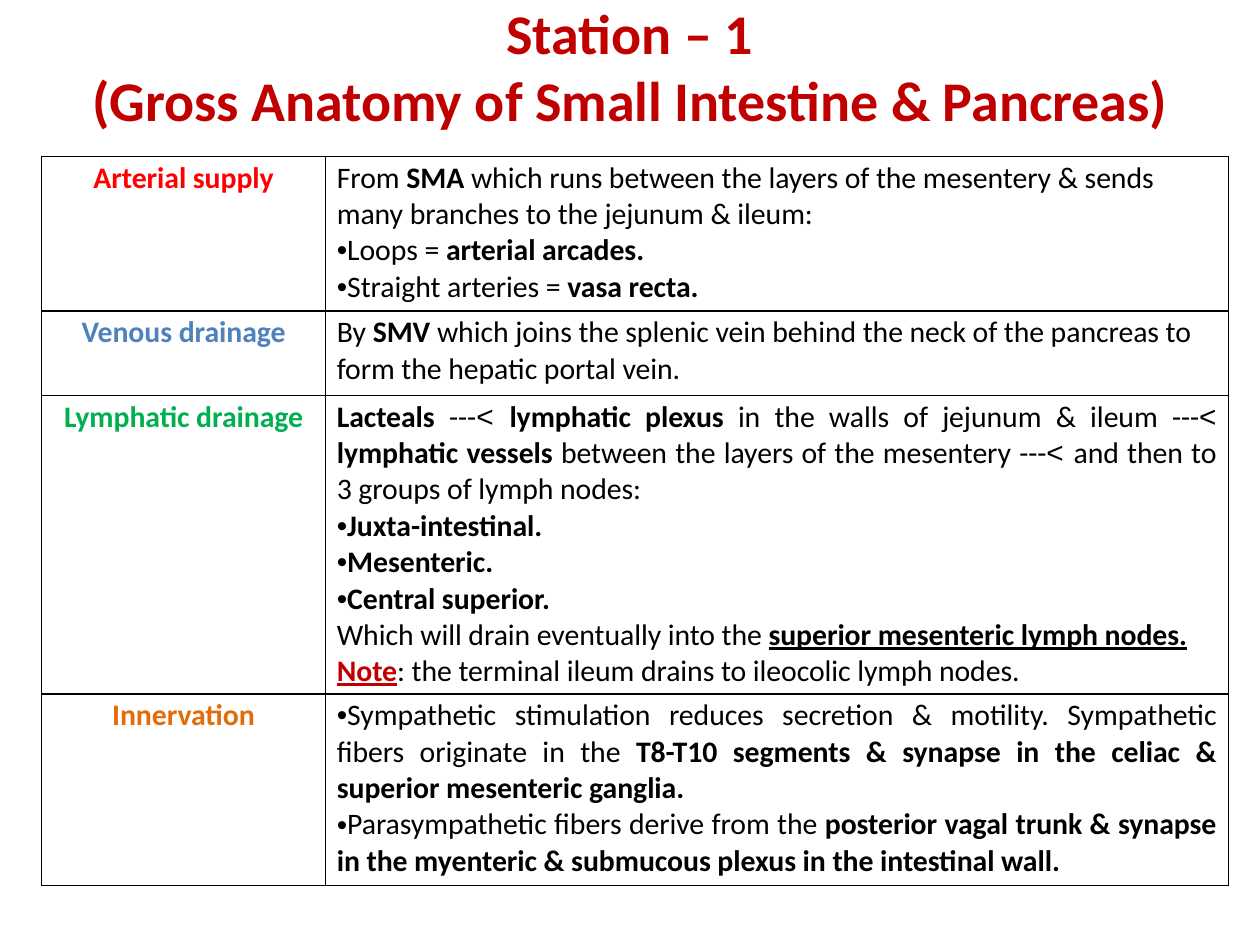
from dataclasses import dataclass

import pptx
import pptx.dml.color
import pptx.enum.text
import pptx.oxml
import pptx.oxml.ns
import pptx.util
from pptx.util import Cm, Pt

COLORS = {
    "title": "C00000",
    "text": "000000",
    "arterial": "FF0000",
    "venous": "4F81BC",
    "lymphatic": "00AF50",
    "innervation": "E36C09",
}
ALIGN = pptx.enum.text.PP_ALIGN
BODY_SIZE = 17
BODY_INDENT = Cm(0.23)


@dataclass(frozen=True)
class Span:
    text: str
    bold: bool = False
    underline: bool = False
    font: str = "Calibri"
    color: str = "text"


@dataclass(frozen=True)
class Line:
    spans: tuple[Span, ...]
    bullet: bool = False
    justified: bool = False


@dataclass(frozen=True)
class Topic:
    name: str
    color: str
    height: float
    lines: tuple[Line, ...]


def strong(text: str, **style) -> Span:
    return Span(text, bold=True, **style)


def arrow() -> Span:
    return Span("< ", font="Arial")


TOPICS = (
    Topic("Arterial supply", "arterial", 3.12, (
        Line((Span("From "), strong("SMA "),
              Span("which runs between the layers of the mesentery & sends "
                   "many branches to the jejunum & ileum:"))),
        Line((Span("Loops = "), strong("arterial arcades.")), bullet=True),
        Line((Span("Straight arteries = "), strong("vasa recta.")), bullet=True),
    )),
    Topic("Venous drainage", "venous", 1.7, (
        Line((Span("By "), strong("SMV "),
              Span("which joins the splenic vein behind the neck of the "
                   "pancreas to form the hepatic portal vein."))),
    )),
    Topic("Lymphatic drainage", "lymphatic", 6.02, (
        Line((strong("Lacteals "), Span("---"), arrow(),
              strong("lymphatic plexus "),
              Span("in the walls of jejunum & ileum ---"), arrow(),
              strong("lymphatic vessels "),
              Span("between the layers of the mesentery ---"), arrow(),
              Span("and then to 3 groups of lymph nodes:")), justified=True),
        *(Line((strong(nodes),), bullet=True, justified=True)
          for nodes in ("Juxta-intestinal.", "Mesenteric.", "Central superior.")),
        Line((Span("Which will drain eventually into the "),
              strong("superior mesenteric lymph nodes. ", underline=True),
              strong("Note", underline=True, color="title"),
              Span(": the terminal ileum drains to ileocolic lymph nodes."))),
    )),
    Topic("Innervation", "innervation", 3.86, (
        Line((Span("Sympathetic stimulation reduces secretion & motility. "
                   "Sympathetic fibers originate in the "),
              strong("T8-T10 segments & synapse in the celiac & "
                     "superior mesenteric ganglia.")),
             bullet=True, justified=True),
        Line((Span("Parasympathetic fibers derive from the "),
              strong("posterior vagal trunk & synapse in the myenteric & "
                     "submucous plexus in the intestinal wall.")),
             bullet=True, justified=True),
    )),
)


def add_text(paragraph, text: str, *, size: float, color: str, bold: bool = False,
             underline: bool = False, font: str = "Calibri") -> None:
    run = paragraph.add_run()
    run.text = text
    run.font.size = Pt(size)
    run.font.name = font
    run.font.bold = bold
    run.font.underline = underline
    run.font.color.rgb = pptx.dml.color.RGBColor.from_string(COLORS[color])
    run._r.get_or_add_rPr().set("spc", "-5")


def next_paragraph(frame, index: int):
    return frame.paragraphs[0] if index == 0 else frame.add_paragraph()


def set_indent(paragraph, bullet: bool) -> None:
    properties = paragraph._p.get_or_add_pPr()
    properties.set("marL", str(BODY_INDENT))
    properties.set("indent", "0")
    if bullet:
        namespace = pptx.oxml.ns.nsdecls("a")
        for tag in ('buFont {} typeface="Arial"', 'buChar {} char="•"'):
            properties.append(pptx.oxml.parse_xml(f"<a:{tag.format(namespace)}/>"))


def format_cell(cell) -> None:
    """Clear the fill, tighten the margins and rule all four sides."""
    cell.fill.background()
    cell.margin_left = cell.margin_right = cell.margin_bottom = 0
    cell.margin_top = Pt(2)
    properties = cell._tc.get_or_add_tcPr()
    for position, side in enumerate("LRTB"):
        properties.insert(position, pptx.oxml.parse_xml(
            f'<a:ln{side} {pptx.oxml.ns.nsdecls("a")} w="{Pt(1)}"><a:solidFill>'
            f'<a:srgbClr val="{COLORS["text"]}"/></a:solidFill></a:ln{side}>'))


def fill_title(title) -> None:
    title.left, title.top = Cm(0.48), Cm(-0.03)
    title.width, title.height = Cm(24.43), Cm(2.74)
    frame = title.text_frame
    frame.auto_size = pptx.enum.text.MSO_AUTO_SIZE.NONE
    frame.vertical_anchor = pptx.enum.text.MSO_ANCHOR.TOP
    frame.margin_left = frame.margin_right = frame.margin_top = frame.margin_bottom = 0
    headings = ("Station – 1", "(Gross Anatomy of Small Intestine & Pancreas)")
    for index, heading in enumerate(headings):
        paragraph = next_paragraph(frame, index)
        paragraph.alignment = ALIGN.CENTER
        add_text(paragraph, heading, size=32, color="title", bold=True)


def fill_topic(name_cell, detail_cell, topic: Topic) -> None:
    for cell in (name_cell, detail_cell):
        format_cell(cell)
    detail_cell.margin_right = Cm(0.25)

    name = name_cell.text_frame.paragraphs[0]
    name.alignment = ALIGN.CENTER
    add_text(name, topic.name, size=BODY_SIZE, color=topic.color, bold=True)

    for index, line in enumerate(topic.lines):
        paragraph = next_paragraph(detail_cell.text_frame, index)
        set_indent(paragraph, line.bullet)
        paragraph.alignment = ALIGN.JUSTIFY if line.justified else ALIGN.LEFT
        for span in line.spans:
            add_text(paragraph, span.text, size=BODY_SIZE, color=span.color,
                     bold=span.bold, underline=span.underline, font=span.font)


def add_topic_table(slide) -> None:
    widths = (5.72, 18.21)
    table = slide.shapes.add_table(
        len(TOPICS), len(widths), Cm(0.84), Cm(3.15), Cm(sum(widths)),
        Cm(sum(topic.height for topic in TOPICS))).table
    table.first_row = table.horz_banding = False
    for column, width in zip(table.columns, widths):
        column.width = Cm(width)
    for index, topic in enumerate(TOPICS):
        table.rows[index].height = Cm(topic.height)
        fill_topic(table.cell(index, 0), table.cell(index, 1), topic)


def main() -> None:
    presentation = pptx.Presentation()
    presentation.slide_width, presentation.slide_height = Cm(25.4), Cm(19.05)
    slide = presentation.slides.add_slide(presentation.slide_layouts[5])
    fill_title(slide.shapes.title)
    add_topic_table(slide)
    presentation.save("out.pptx")


if __name__ == "__main__":
    main()
